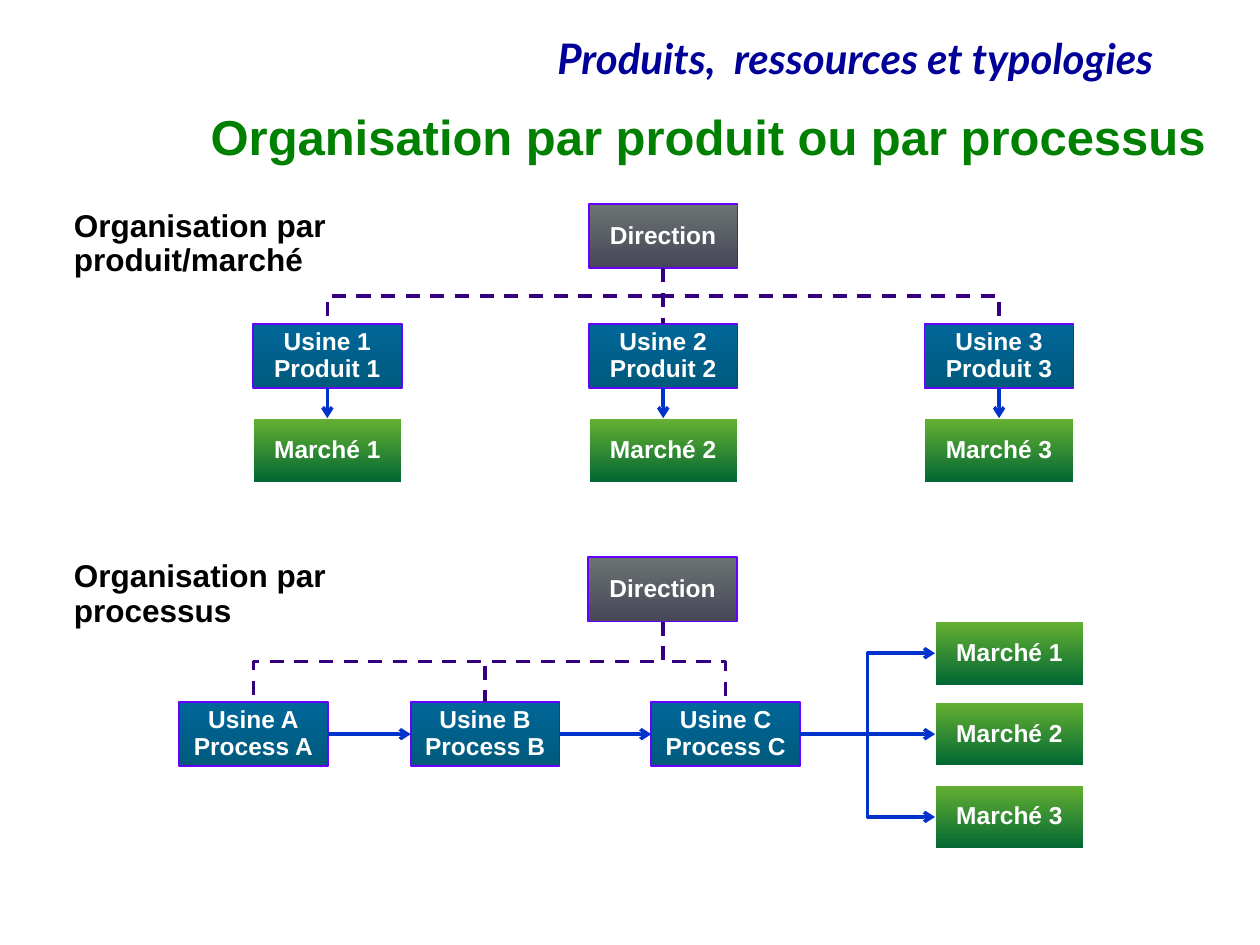
from lxml import etree
from pptx import Presentation, util as u
from pptx.dml.color import RGBColor
from pptx.enum import dml, shapes, text
from pptx.oxml import ns

TOP, LEFT, BOTTOM, RIGHT = range(4)


def rgb(value):
    return RGBColor.from_string(value)


class Diagram:
    font = "Arial"
    box_size = (3, 1.3)
    styles = {
        "direction": ("6C7472", "464658", "6600FF"),
        "usine": ("006699", "005A7C", "6600FF"),
        "marché": ("66B132", "006633", "FFFFFF"),
    }

    def __init__(self, slide):
        self.s = slide

    def set_text(self, tf, content, size, color, align, spacing=0.9, font=None, italic=False):
        tf.text = content
        for p in tf.paragraphs:
            p.alignment = align
            p.line_spacing = spacing
            for r in p.runs:
                r.font.name = font or self.font
                r.font.size = u.Pt(size)
                r.font.bold = True
                r.font.italic = italic
                r.font.color.rgb = rgb(color)

    def title(self, content, x, y, w, h):
        sp = self.s.shapes.title
        sp.left, sp.top, sp.width, sp.height = map(u.Cm, (x, y, w, h))
        tf = sp.text_frame
        tf.auto_size = text.MSO_AUTO_SIZE.NONE
        tf.vertical_anchor = text.MSO_ANCHOR.MIDDLE
        self.set_text(tf, content, 28, "008000", text.PP_ALIGN.RIGHT, u.Pt(45.8))

    def label(self, content, x, y, w, h, size=18, color="000000", align=text.PP_ALIGN.LEFT, **style):
        tf = self.s.shapes.add_textbox(*map(u.Cm, (x, y, w, h))).text_frame
        tf.word_wrap = True
        self.set_text(tf, content, size, color, align, **style)

    def box(self, kind, content, x, y):
        start, end, border = self.styles[kind]
        sp = self.s.shapes.add_shape(
            shapes.MSO_SHAPE.RECTANGLE, *map(u.Cm, (x, y, *self.box_size)))
        sp.shadow.inherit = False
        sp.fill.gradient()
        sp.fill.gradient_angle = 270
        for stop, color, position in zip(sp.fill.gradient_stops, (start, end), (0, 1)):
            stop.color.rgb = rgb(color)
            stop.position = position
        sp.line.color.rgb = rgb(border)
        sp.line.width = u.Pt(1)
        tf = sp.text_frame
        tf.margin_left = tf.margin_right = tf.margin_top = tf.margin_bottom = 0
        tf.vertical_anchor = text.MSO_ANCHOR.MIDDLE
        self.set_text(tf, content, 14, "FFFFFF", text.PP_ALIGN.CENTER)
        return sp

    def connect(self, start, start_side, end, end_side, color, bent):
        kind = shapes.MSO_CONNECTOR.ELBOW if bent else shapes.MSO_CONNECTOR.STRAIGHT
        c = self.s.shapes.add_connector(kind, 0, 0, 0, 0)
        c.begin_connect(start, start_side)
        c.end_connect(end, end_side)
        c.line.color.rgb = rgb(color)
        c.line.width = u.Pt(2)
        etree.SubElement(c.element.spPr, ns.qn("a:effectLst"))
        return c

    def flow(self, start, start_side, end, end_side, bent=False):
        c = self.connect(start, start_side, end, end_side, "0033CC", bent)
        etree.SubElement(c.element.spPr.get_or_add_ln(), ns.qn("a:tailEnd"), type="arrow")

    def hierarchy(self, parent, child, bent=True):
        c = self.connect(parent, BOTTOM, child, TOP, "330080", bent)
        c.line.dash_style = dml.MSO_LINE.DASH
        if bent:
            self.turn_down(c)

    def turn_down(self, c):
        to_right = c.end_x > c.begin_x
        middle_x, middle_y = (c.begin_x + c.end_x) // 2, (c.begin_y + c.end_y) // 2
        w, h = c.height, c.width
        c.left, c.top, c.width, c.height = middle_x - w // 2, middle_y - h // 2, w, h
        xfrm = c.element.spPr.xfrm
        xfrm.rot = 270 if to_right else 90
        xfrm.flipH = to_right
        xfrm.flipV = False


def product_organisation(d):
    left, step = 5.1, 6.77
    d.label("Organisation par produit/marché", 1.24, 4.11, 8.05, 0.97)
    direction = d.box("direction", "Direction", left + step, 4.11)
    for i in range(3):
        x = left + i * step
        usine = d.box("usine", f"Usine {i + 1}\nProduit {i + 1}", x, 6.53)
        marche = d.box("marché", f"Marché {i + 1}", x, 8.43)
        d.flow(usine, BOTTOM, marche, TOP)
        d.hierarchy(direction, usine, bent=i != 1)


def process_organisation(d):
    row = 14.15
    d.label("Organisation par processus", 1.24, 11.18, 6.93, 0.97)
    direction = d.box("direction", "Direction", 11.86, 11.23)
    usines = [d.box("usine", f"Usine {name}\nProcess {name}", x, row)
              for name, x in zip("ABC", (3.61, 8.28, 13.13))]
    for usine in usines:
        d.hierarchy(direction, usine)
    for usine, following in zip(usines, usines[1:]):
        d.flow(usine, RIGHT, following, LEFT)
    for i, y in enumerate((12.52, row, 15.82), 1):
        marche = d.box("marché", f"Marché {i}", 18.85, y)
        d.flow(usines[-1], RIGHT, marche, LEFT, bent=y != row)


def main():
    prs = Presentation()
    prs.slide_width, prs.slide_height = u.Cm(25.4), u.Cm(19.05)
    d = Diagram(prs.slides.add_slide(prs.slide_layouts[5]))
    d.label("Produits,  ressources et typologies", 3.18, 0.64, 20.32, 2.36, 24, "000099",
            text.PP_ALIGN.RIGHT, font="Lato", italic=True)
    d.title("Organisation par produit ou par processus", 1.7, 1.32, 22.86, 2.39)
    product_organisation(d)
    process_organisation(d)
    prs.save("out.pptx")


if __name__ == "__main__":
    main()
